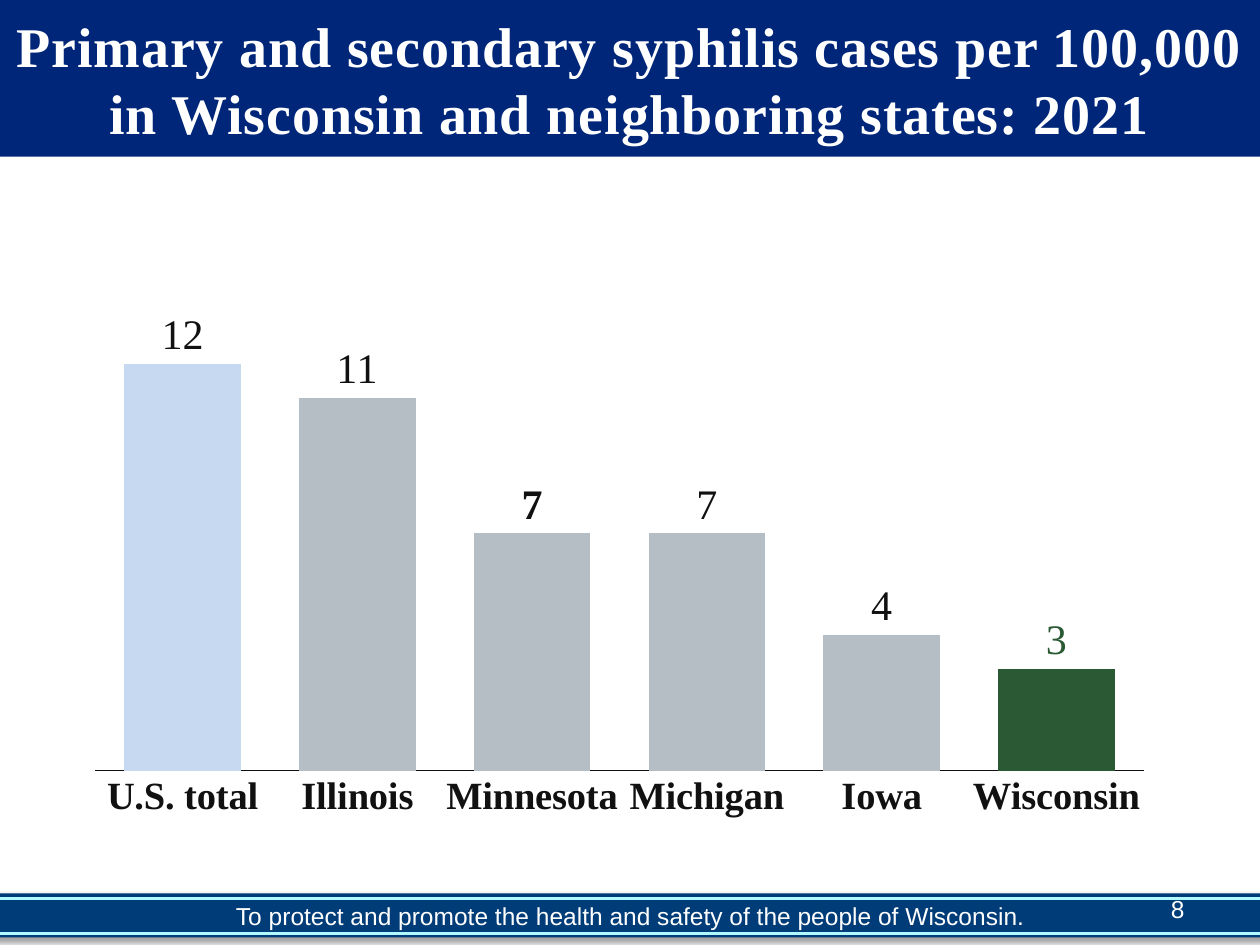
from dataclasses import dataclass

from lxml import etree
from pptx import Presentation
from pptx import util as u
from pptx.chart import data as chart_data
from pptx.dml import color
from pptx.enum import chart as ch, shapes, text
from pptx.oxml import ns, parse_xml


@dataclass(frozen=True)
class Theme:
    """Colours, fonts and type sizes of the slide."""
    title_fill: str = "002679"
    footer_fill: str = "003D78"
    rule: str = "B0FAFF"
    white: str = "FFFFFF"
    ink: str = "111111"
    nation: str = "C6D9F1"
    neighbor: str = "B5BDC5"
    wisconsin: str = "2A5934"
    serif: str = "Times New Roman"
    sans: str = "Arial"
    title_size: int = 32
    value_size: int = 24
    category_size: int = 22
    footer_size: int = 14


THEME = Theme()
CASES = {"U.S. total": 12, "Illinois": 11, "Minnesota": 7,
         "Michigan": 7, "Iowa": 4, "Wisconsin": 3}


def rgb(value):
    """Turn a hex string into a colour."""
    return color.RGBColor.from_string(value)


def style_font(font, name, size, tint, bold=False):
    """Apply typeface, size, colour and weight to a font."""
    font.name, font.size, font.bold = name, u.Pt(size), bold
    font.color.rgb = rgb(tint)


def write(frame, words, *, name, size, tint, bold=False, spacing=0,
          align=text.PP_ALIGN.CENTER):
    """Put one formatted paragraph in a text frame."""
    frame.word_wrap = True
    frame.vertical_anchor = text.MSO_ANCHOR.MIDDLE
    paragraph = frame.paragraphs[0]
    paragraph.alignment = align
    run = paragraph.add_run()
    run.text = words
    style_font(run.font, name, size, tint, bold)
    if spacing:
        run.font._element.set("spc", str(int(spacing * 100)))


class SlideBuilder:
    """Hold the style and the current slide."""

    def __init__(self, theme, slide):
        """Keep the theme and the slide."""
        self.theme, self.slide = theme, slide

    def band(self, left, top, width, height, fill):
        """Add a plain filled rectangle."""
        band = self.slide.shapes.add_shape(
            shapes.MSO_SHAPE.RECTANGLE, *map(u.Cm, (left, top, width, height)))
        band.shadow.inherit = False
        band.fill.solid()
        band.fill.fore_color.rgb = rgb(fill)
        band.line.fill.background()
        return band

    def cast_shadow(self, band):
        """Give a band a soft diagonal shadow."""
        effects = band._element.spPr.find(ns.qn("a:effectLst"))
        effects.append(parse_xml(
            f'<a:outerShdw {ns.nsdecls("a")} blurRad="{u.Pt(4)}" dist="{u.Pt(3)}" '
            'dir="2700000" algn="tl" rotWithShape="0"><a:srgbClr val="000000">'
            '<a:alpha val="40000"/></a:srgbClr></a:outerShdw>'))

    def label(self, left, top, width, height, words, **style):
        """Add a text box."""
        box = self.slide.shapes.add_textbox(*map(u.Cm, (left, top, width, height)))
        write(box.text_frame, words, **style)

    def rule(self, left, right, y):
        """Add a thin horizontal line."""
        line = self.slide.shapes.add_connector(
            shapes.MSO_CONNECTOR.STRAIGHT, *map(u.Cm, (left, y, right, y)))
        line.line.color.rgb = rgb(self.theme.rule)
        line.line.width = u.Pt(1.5)
        etree.SubElement(line._element.spPr, ns.qn("a:effectLst"))

    def column_chart(self, left, top, width, height, cases, bar_tints, label_styles):
        """Add a column chart with per-column colours and label styles."""
        theme = self.theme
        source = chart_data.CategoryChartData()
        source.categories = list(cases)
        source.add_series("Series 1", list(cases.values()))
        chart = self.slide.shapes.add_chart(
            ch.XL_CHART_TYPE.COLUMN_CLUSTERED,
            *map(u.Cm, (left, top, width, height)), source).chart
        chart.has_legend = chart.has_title = False
        style_font(chart.font, theme.serif, 12, theme.ink, True)

        states = chart.category_axis
        states.major_tick_mark = states.minor_tick_mark = ch.XL_TICK_MARK.NONE
        states.format.line.color.rgb = rgb(theme.ink)
        states.format.line.width = u.Pt(0.75)
        style_font(states.tick_labels.font, theme.serif, theme.category_size,
                   theme.ink, True)
        rates = chart.value_axis
        rates.minimum_scale, rates.maximum_scale = 0, 14
        rates.has_major_gridlines = rates.visible = False

        plot = chart.plots[0]
        plot.gap_width, plot.overlap, plot.vary_by_categories = 50, -30, False
        columns = plot.series[0]
        columns.format.fill.solid()
        columns.format.fill.fore_color.rgb = rgb(theme.neighbor)
        values = columns.data_labels
        values.show_value = True
        values.position = ch.XL_LABEL_POSITION.OUTSIDE_END
        style_font(values.font, theme.serif, theme.value_size, theme.ink)

        for index, (state, rate) in enumerate(cases.items()):
            point = columns.points[index]
            if state in bar_tints:
                point.format.fill.solid()
                point.format.fill.fore_color.rgb = rgb(bar_tints[state])
            if state in label_styles:
                write(point.data_label.text_frame, str(rate), name=theme.serif,
                      size=theme.value_size, **label_styles[state])
                point.data_label.position = ch.XL_LABEL_POSITION.OUTSIDE_END
        self.fix_plot_area(chart, x=0.02, y=0.02, w=0.96, h=0.87)

    def fix_plot_area(self, chart, **fractions):
        """Set the inner plot area as fractions of the chart."""
        area = chart._chartSpace.chart.plotArea
        for old in area.findall(ns.qn("c:layout")):
            area.remove(old)
        layout = etree.Element(ns.qn("c:layout"))
        manual = etree.SubElement(layout, ns.qn("c:manualLayout"))
        settings = {"layoutTarget": "inner", "xMode": "edge", "yMode": "edge",
                    **fractions}
        for tag, value in settings.items():
            etree.SubElement(manual, ns.qn(f"c:{tag}")).set("val", str(value))
        area.insert(0, layout)


def main():
    """Build the syphilis rate slide."""
    deck = Presentation()
    deck.slide_width, deck.slide_height = u.Cm(25.4), u.Cm(19.05)
    page = SlideBuilder(THEME, deck.slides.add_slide(deck.slide_layouts[6]))
    footer_style = dict(name=THEME.sans, size=THEME.footer_size, tint=THEME.white)

    footer = page.band(-0.25, 18.01, 25.9, 0.89, THEME.footer_fill)
    page.cast_shadow(footer)
    page.label(-0.2, 18.21, 25.83, 0.51,
               "To protect and promote the health and safety of the people of Wisconsin.",
               **footer_style)
    for y in (18.11, 18.82):
        page.rule(-0.25, 25.65, y)
    page.label(18.21, 17.81, 5.92, 1.02, "8", align=text.PP_ALIGN.RIGHT, **footer_style)

    title = page.band(0, 0, 25.4, 3.16, THEME.title_fill)
    write(title.text_frame,
          "Primary and secondary syphilis cases per 100,000 "
          "in Wisconsin and neighboring states: 2021",
          name=THEME.serif, size=THEME.title_size, tint=THEME.white,
          bold=True, spacing=0.5)

    page.column_chart(
        1.48, 5.75, 22.02, 11, CASES,
        bar_tints={"U.S. total": THEME.nation, "Wisconsin": THEME.wisconsin},
        label_styles={"Minnesota": dict(tint=THEME.ink, bold=True),
                      "Wisconsin": dict(tint=THEME.wisconsin)})
    deck.save("out.pptx")


if __name__ == "__main__":
    main()
